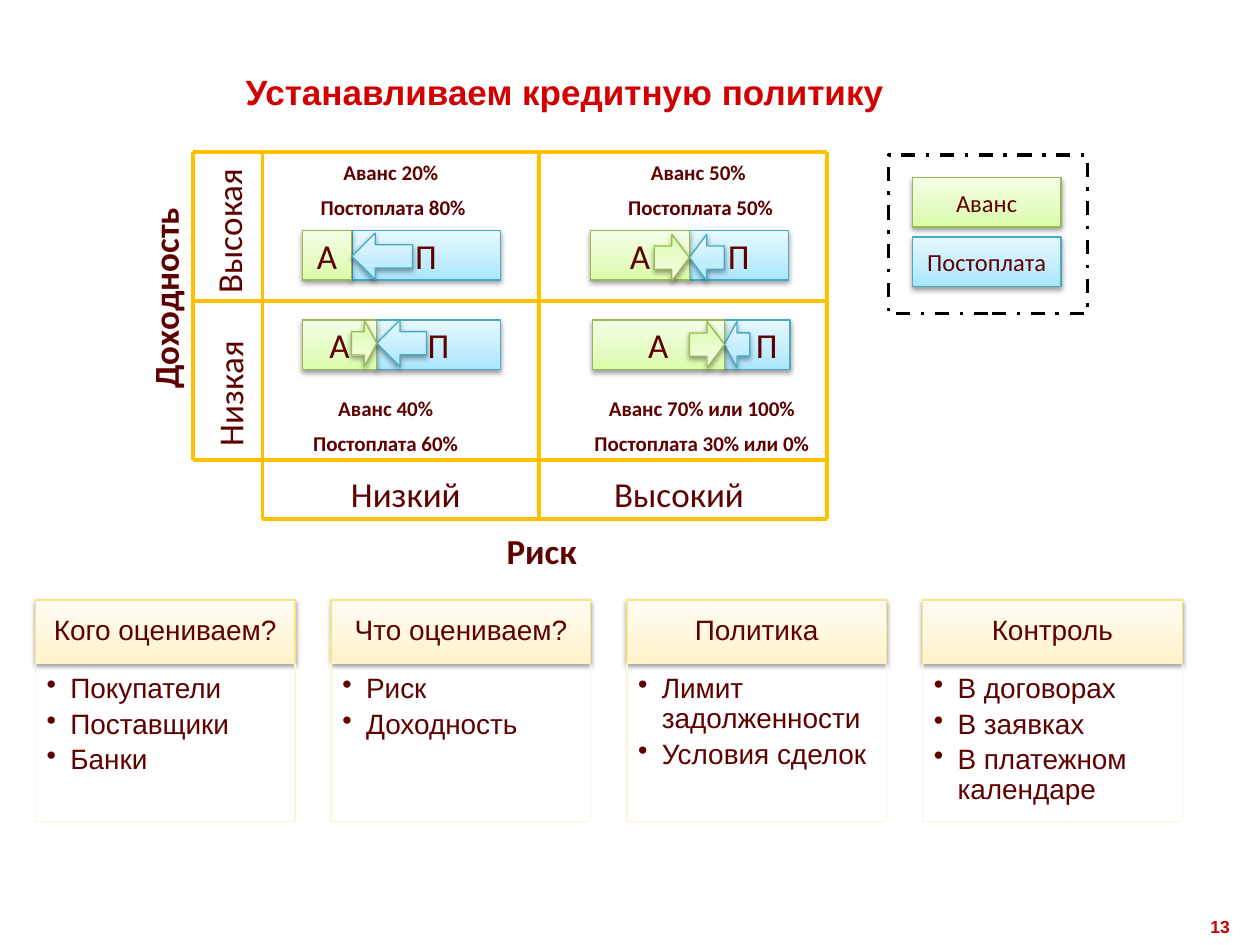
from copy import deepcopy
from dataclasses import dataclass

from lxml import etree
from pptx import Presentation
from pptx.dml.color import RGBColor
from pptx.enum.dml import MSO_LINE
from pptx.enum.shapes import MSO_CONNECTOR, MSO_SHAPE
from pptx.enum.text import MSO_ANCHOR, PP_ALIGN
from pptx.oxml.ns import qn
from pptx.util import Pt

RECT, LEFT_ARROW = MSO_SHAPE.RECTANGLE, MSO_SHAPE.LEFT_ARROW
STRAIGHT, DASH_DOT = MSO_CONNECTOR.STRAIGHT, MSO_LINE.DASH_DOT
LEFT, CENTER, RIGHT = PP_ALIGN.LEFT, PP_ALIGN.CENTER, PP_ALIGN.RIGHT
TOP, MIDDLE = MSO_ANCHOR.TOP, MSO_ANCHOR.MIDDLE

COLORS = {
    "text": "5F0000", "title": "D20000", "number": "C70000", "grid": "FFC000",
    "frame": "000000", "card_edge": "FDF4D9",
}


@dataclass(frozen=True)
class Palette:
    line: str
    stops: tuple[str, str, str]


ADVANCE = Palette("98B955", ("DAFDA7", "E4FCC2", "F5FFE7"))
POSTPAY = Palette("46AAC5", ("A7E6FF", "C1EDFF", "E7F8FF"))
HEADER = Palette("F9E383", ("FFF3CA", "FFF6DA", "FFFCF1"))


@dataclass(frozen=True)
class TextStyle:
    size: float
    font: str = "Calibri"
    color: str = COLORS["text"]
    bold: bool = False


@dataclass(frozen=True)
class AxisLabel:
    text: str
    left: float
    top: float
    width: float
    bold: bool = False
    rotation: float = 0


@dataclass(frozen=True)
class Quadrant:
    left: float
    top: float
    advance_width: float
    arrow_top: float
    advance_arrow: float
    postpay_arrow: float
    caption_left: float
    caption_top: float
    caption_width: float
    caption: tuple[str, str]
    postpay_align: PP_ALIGN = CENTER


@dataclass(frozen=True)
class Card:
    heading: str
    items: tuple[str, ...]


AXIS_LABELS = [
    AxisLabel("Риск", 282.2, 297.4, 54.7, bold=True),
    AxisLabel("Низкая", 93.6, 208, 74.9, rotation=270),
    AxisLabel("Высокий", 343.4, 265, 89.3),
    AxisLabel("Высокая", 87.1, 115.2, 86.4, rotation=270),
    AxisLabel("Низкий", 193, 265, 77.8),
    AxisLabel("Доходность", 35.3, 153.4, 118, bold=True, rotation=270),
]
QUADRANTS = [
    Quadrant(172.8, 182.9, 42.5, 182.9, 14.4, 28.4, 171.4, 222.5, 98,
             ("Аванс 40%", "Постоплата 60%")),
    Quadrant(337.4, 131.8, 56.5, 133.9, 20, 20, 351.4, 87.8, 98,
             ("Аванс 50% ", "Постоплата 50%")),
    Quadrant(172.8, 131.8, 28.3, 133.2, 0, 34.6, 175.7, 87.8, 98,
             ("Аванс 20% ", "Постоплата 80%")),
    Quadrant(338.4, 182.9, 75.6, 183.6, 20, 14.4, 332, 222.5, 138.2,
             ("Аванс 70% или 100%", "Постоплата 30% или 0%"), RIGHT),
]
CARDS = [
    Card("Кого оцениваем?", ("Покупатели", "Поставщики", "Банки")),
    Card("Что оцениваем?", ("Риск", "Доходность")),
    Card("Политика", ("Лимит задолженности", "Условия сделок")),
    Card("Контроль", ("В договорах", "В заявках", "В платежном календаре")),
]
BAR_WIDTH, BAR_HEIGHT, ARROW_HEIGHT = 113.1, 28.3, 26.6


def add_run(paragraph, text: str, style: TextStyle) -> None:
    run = paragraph.add_run()
    run.text = text
    run.font.size, run.font.name, run.font.bold = Pt(style.size), style.font, style.bold
    run.font.color.rgb = RGBColor.from_string(style.color)


def write(frame, lines, style: TextStyle, align=CENTER, anchor=MIDDLE, before=0.0) -> None:
    frame.vertical_anchor = anchor
    for index, line in enumerate(lines):
        paragraph = frame.add_paragraph() if index else frame.paragraphs[0]
        paragraph.alignment = align
        if index and before:
            paragraph.space_before = Pt(before)
        add_run(paragraph, line, style)


def set_insets(frame, left: float, top: float, right: float, bottom: float) -> None:
    frame.margin_left, frame.margin_top = Pt(left), Pt(top)
    frame.margin_right, frame.margin_bottom = Pt(right), Pt(bottom)


def add_box(slide, left, top, width, height, edge: str, weight=0.75, kind=RECT):
    box = slide.shapes.add_shape(kind, Pt(left), Pt(top), Pt(width), Pt(height))
    box.shadow.inherit = False
    box.fill.background()
    box.line.color.rgb = RGBColor.from_string(edge)
    box.line.width = Pt(weight)
    return box


def add_glossy(slide, left, top, width, height, palette: Palette, kind=RECT):
    shape = add_box(slide, left, top, width, height, palette.line, kind=kind)
    shape.fill.gradient()
    shape.fill.gradient_angle = 90
    properties = shape._element.spPr
    stop_list = properties.find(".//" + qn("a:gsLst"))
    stop_list.insert(1, deepcopy(stop_list[0]))
    for stop, position, color in zip(shape.fill.gradient_stops, (0, 0.35, 1), palette.stops):
        stop.position = position
        stop.color.rgb = RGBColor.from_string(color)
    # Soft shadow below the shape
    shadow = etree.SubElement(properties.find(qn("a:effectLst")), qn("a:outerShdw"),
                              blurRad=str(Pt(3.1)), dist=str(Pt(1.6)),
                              dir="5400000", rotWithShape="0")
    black = etree.SubElement(shadow, qn("a:srgbClr"), val="000000")
    etree.SubElement(black, qn("a:alpha"), val="38000")
    return shape


def add_label(slide, left, top, width, height, lines, style: TextStyle, **layout):
    label = slide.shapes.add_textbox(Pt(left), Pt(top), Pt(width), Pt(height))
    label.text_frame.word_wrap = False
    write(label.text_frame, lines, style, **layout)
    return label


def add_grid_line(slide, x1: float, y1: float, x2: float, y2: float) -> None:
    line = slide.shapes.add_connector(STRAIGHT, Pt(x1), Pt(y1), Pt(x2), Pt(y2))
    line.line.color.rgb = RGBColor.from_string(COLORS["grid"])
    line.line.width = Pt(2.25)
    etree.SubElement(line._element.spPr, qn("a:effectLst"))


def add_quadrant(slide, q: Quadrant) -> None:
    split = q.left + q.advance_width
    letter = TextStyle(20)
    postpay = add_glossy(slide, split, q.top, BAR_WIDTH - q.advance_width, BAR_HEIGHT, POSTPAY)
    write(postpay.text_frame, ["П"], letter, q.postpay_align)
    advance = add_glossy(slide, q.left, q.top, q.advance_width, BAR_HEIGHT, ADVANCE)
    write(advance.text_frame, ["А"], letter)
    add_glossy(slide, split, q.arrow_top, q.postpay_arrow, ARROW_HEIGHT, POSTPAY, LEFT_ARROW)
    if q.advance_arrow:
        arrow = add_glossy(slide, split - q.advance_arrow, q.arrow_top, q.advance_arrow,
                           ARROW_HEIGHT, ADVANCE, LEFT_ARROW)
        arrow.rotation = 180
    add_label(slide, q.caption_left, q.caption_top, q.caption_width, 46.8, q.caption,
              TextStyle(12, bold=True), anchor=TOP, before=5.5)


def add_card(slide, left: float, card: Card) -> None:
    style = TextStyle(16, "Arial")
    header = add_glossy(slide, left, 342.8, 148.4, 36.2, HEADER)
    set_insets(header.text_frame, 8.6, 5, 8.6, 5)
    write(header.text_frame, [card.heading], style)
    header.text_frame.paragraphs[0].line_spacing = 0.9
    body = add_box(slide, left, 379, 148.4, 90.4, COLORS["card_edge"])
    set_insets(body.text_frame, 6.5, 6.5, 8.6, 10)
    write(body.text_frame, card.items, style, LEFT, TOP)
    for paragraph in body.text_frame.paragraphs:
        paragraph.line_spacing, paragraph.space_after = 0.9, Pt(3)
        bullet = paragraph._p.get_or_add_pPr()
        bullet.set("marL", str(Pt(13.5)))
        bullet.set("indent", str(-Pt(13.5)))
        etree.SubElement(bullet, qn("a:buChar"), char="•")


def main() -> None:
    deck = Presentation()
    deck.slide_width, deck.slide_height = Pt(720), Pt(540)
    slide = deck.slides.add_slide(deck.slide_layouts[5])

    # Title and page number
    title = slide.shapes.title
    title.left, title.top, title.width, title.height = Pt(133.2), Pt(12.2), Pt(527), Pt(85)
    write(title.text_frame, ["Устанавливаем кредитную политику"],
          TextStyle(20, "Arial", COLORS["title"], True), LEFT)
    title.text_frame.paragraphs[0].line_spacing = 0.8
    add_label(slide, 649.4, 519.8, 60.5, 20.2, ["13"],
              TextStyle(10, "Arial", COLORS["number"], True), align=RIGHT, anchor=TOP)

    # Cards along the bottom
    for index, card in enumerate(CARDS):
        add_card(slide, 20.2 + 169 * index, card)

    # Risk and return matrix
    outer, left, center, right = 110.2, 150, 308.2, 472.8
    top, middle, bottom, footer = 87, 172, 262.8, 296.6
    for x in (left, center, right):
        add_grid_line(slide, x, top, x, footer)
    for y in (top, middle, bottom):
        add_grid_line(slide, outer, y, right, y)
    add_grid_line(slide, left, footer, right, footer)
    add_grid_line(slide, outer, top, outer, bottom)
    for axis in AXIS_LABELS:
        label = add_label(slide, axis.left, axis.top, axis.width, 33.8, [axis.text],
                          TextStyle(20, bold=axis.bold))
        label.rotation = axis.rotation

    # Legend
    legend = add_box(slide, 507.6, 88.6, 113.8, 90.7, COLORS["frame"], 2)
    legend.line.dash_style = DASH_DOT
    for key_top, name, palette in ((101.5, "Аванс", ADVANCE), (135.4, "Постоплата", POSTPAY)):
        key = add_glossy(slide, 521.3, key_top, 85, BAR_HEIGHT, palette)
        write(key.text_frame, [name], TextStyle(14))

    # Payment split in each quadrant
    for quadrant in QUADRANTS:
        add_quadrant(slide, quadrant)

    deck.save("out.pptx")


if __name__ == "__main__":
    main()
